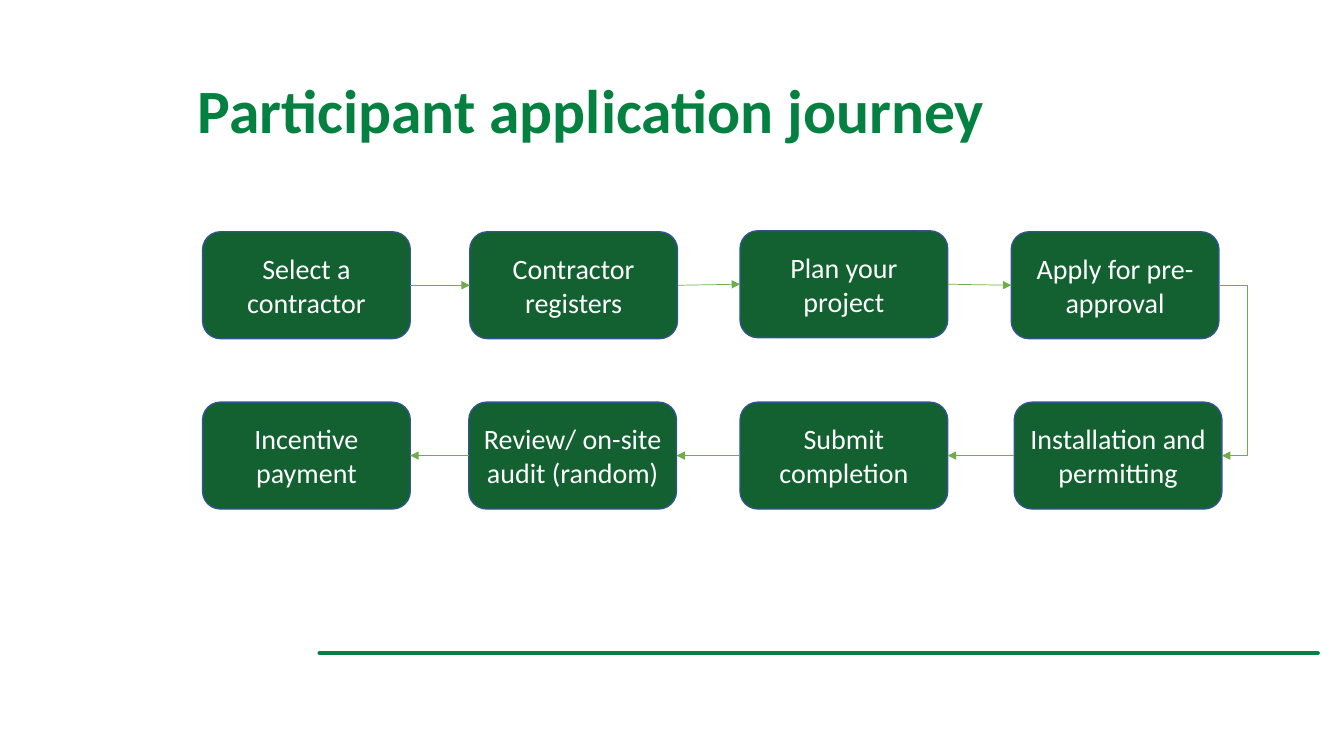
import pptx
import pptx.dml.color
import pptx.enum.shapes
import pptx.enum.text
import pptx.oxml.ns
import pptx.util
from lxml import etree

Inches = pptx.util.Inches
Pt = pptx.util.Pt
RGBColor = pptx.dml.color.RGBColor
qn = pptx.oxml.ns.qn
Connector = pptx.enum.shapes.MSO_CONNECTOR
Align = pptx.enum.text.PP_ALIGN
Anchor = pptx.enum.text.MSO_ANCHOR

TITLE_GREEN = RGBColor(0x04, 0x80, 0x41)
BOX_GREEN = RGBColor(0x13, 0x60, 0x31)
BOX_EDGE = RGBColor(0x32, 0x54, 0x91)
ARROW_GREEN = RGBColor(0x70, 0xAD, 0x47)
WHITE = RGBColor(0xFF, 0xFF, 0xFF)

BOX_WIDTH, BOX_HEIGHT = 2.06, 1.06
LEFT, RIGHT = 1, 3
TOP_ROW = [
    ("Select a contractor", 2.01, 2.3),
    ("Contractor registers", 4.66, 2.3),
    ("Plan your project", 7.34, 2.29),
    ("Apply for pre-approval", 10.03, 2.3),
]
BOTTOM_ROW = [
    ("Installation and permitting", 10.06, 3.99),
    ("Submit completion", 7.34, 3.99),
    ("Review/ on-site audit (random)", 4.65, 3.99),
    ("Incentive payment", 2.01, 3.99),
]


class JourneySlide:
    font_name = "Calibri"

    def __init__(self, deck):
        self.page = deck.slides.add_slide(deck.slide_layouts[5])

    def style_text(self, para, size, color, bold=False):
        para.font.name = self.font_name
        para.font.size = Pt(size)
        para.font.bold = bold
        para.font.color.rgb = color

    def title(self, text, left, top, width, height):
        box = self.page.shapes.title
        box.left, box.top = Inches(left), Inches(top)
        box.width, box.height = Inches(width), Inches(height)
        frame = box.text_frame
        frame.text = text
        frame.auto_size = pptx.enum.text.MSO_AUTO_SIZE.NONE
        frame.vertical_anchor = Anchor.MIDDLE
        para = frame.paragraphs[0]
        para.alignment = Align.LEFT
        para.line_spacing = 0.9
        self.style_text(para, 44, TITLE_GREEN, bold=True)

    def step(self, text, left, top):
        box = self.page.shapes.add_shape(
            pptx.enum.shapes.MSO_SHAPE.ROUNDED_RECTANGLE,
            Inches(left), Inches(top), Inches(BOX_WIDTH), Inches(BOX_HEIGHT))
        box.shadow.inherit = False
        box.fill.solid()
        box.fill.fore_color.rgb = BOX_GREEN
        box.line.color.rgb = BOX_EDGE
        box.line.width = Pt(1)
        frame = box.text_frame
        frame.text = text
        frame.word_wrap = True
        frame.vertical_anchor = Anchor.MIDDLE
        para = frame.paragraphs[0]
        para.alignment = Align.CENTER
        self.style_text(para, 20, WHITE)
        return box

    def line(self, start, end, color, width, kind=Connector.STRAIGHT):
        link = self.page.shapes.add_connector(
            kind, *(Inches(value) for value in (*start, *end)))
        link.line.color.rgb = color
        link.line.width = Pt(width)
        etree.SubElement(link._element.spPr, qn("a:effectLst"))
        return link

    def arrow(self, source, source_side, target, target_side, kind=Connector.STRAIGHT):
        link = self.line((0, 0), (1, 1), ARROW_GREEN, 0.5, kind)
        link.begin_connect(source, source_side)
        link.end_connect(target, target_side)
        outline = link._element.spPr.find(qn("a:ln"))
        etree.SubElement(outline, qn("a:tailEnd"), type="triangle")
        return link

    def turn_arrow(self, source, target, reach):
        """Elbow that leaves and enters on the right, bending at reach."""
        link = self.arrow(source, RIGHT, target, RIGHT, Connector.ELBOW)
        ratio = (Inches(reach) - link.begin_x) / (link.end_x - link.begin_x)
        adjustments = link._element.spPr.find(qn("a:prstGeom")).find(qn("a:avLst"))
        etree.SubElement(adjustments, qn("a:gd"), name="adj1",
                         fmla=f"val {round(ratio * 100000)}")


def main():
    deck = pptx.Presentation()
    deck.slide_width, deck.slide_height = Inches(13.33), Inches(7.5)
    journey = JourneySlide(deck)

    # Title and footer rule
    footer = journey.line((3.17, 6.48), (13.07, 6.48), TITLE_GREEN, 3)
    footer._element.spPr.find(qn("a:ln")).set("cap", "rnd")
    journey.title("Participant application journey", 1.86, 0.4, 10.55, 1.45)

    # Steps, left to right and then back
    top_boxes = [journey.step(*step) for step in TOP_ROW]
    bottom_boxes = [journey.step(*step) for step in BOTTOM_ROW]

    # Arrows between steps
    for boxes, out_side, in_side in ((top_boxes, RIGHT, LEFT), (bottom_boxes, LEFT, RIGHT)):
        for source, target in zip(boxes, boxes[1:]):
            journey.arrow(source, out_side, target, in_side)
    journey.turn_arrow(top_boxes[-1], bottom_boxes[0], 12.37)

    deck.save("out.pptx")


if __name__ == "__main__":
    main()
